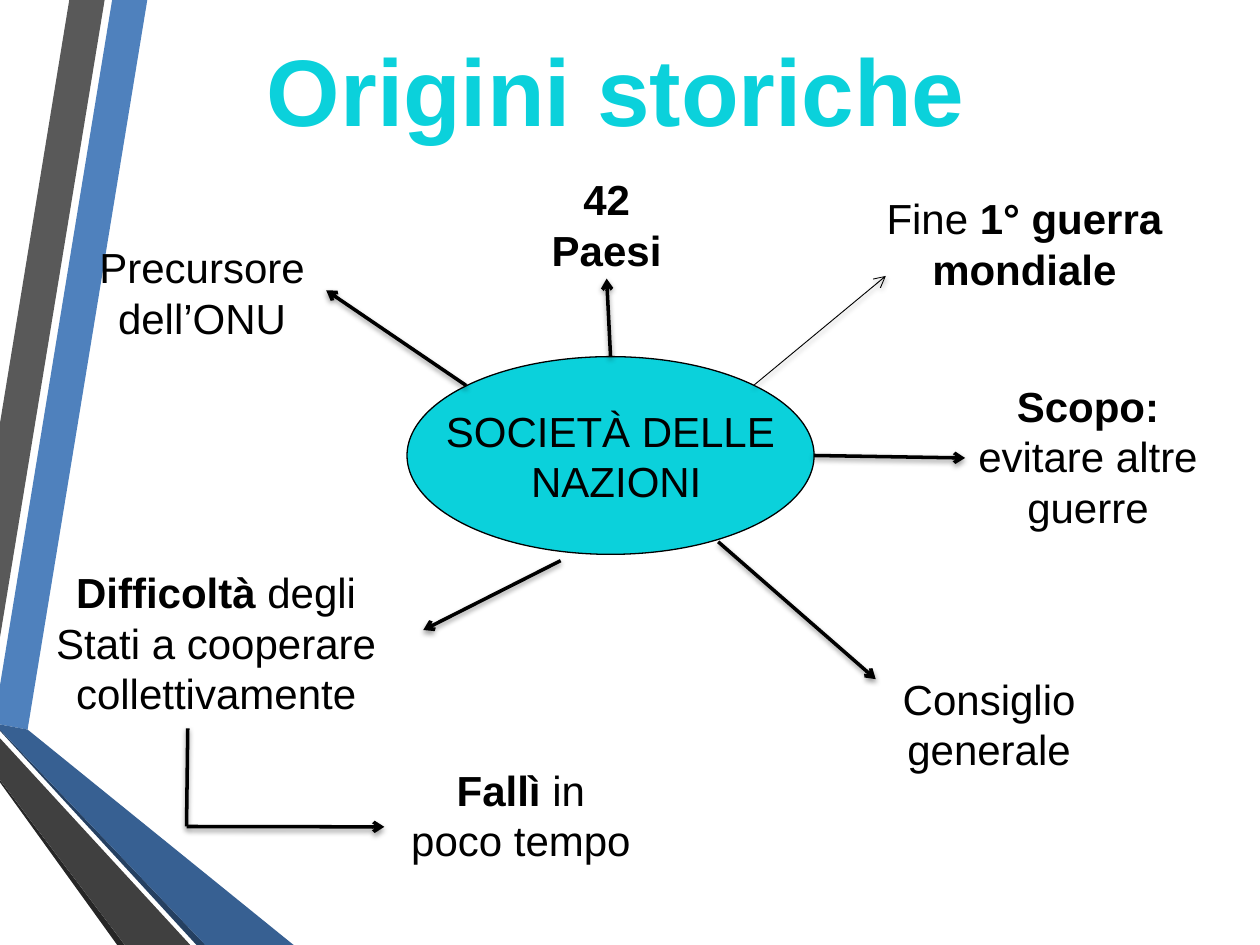
from lxml import etree
from pptx import Presentation
from pptx import util as u
from pptx.dml.color import RGBColor
from pptx.enum import shapes, text
from pptx.oxml import ns

Pt = u.Pt
COLORS = {
    "black": "000000", "cyan": "0BD1DB", "blue": "4F81BD", "gray": "595959",
    "ink": "262626", "navy": "254061", "steel": "376092", "charcoal": "404040",
}

# Folded ribbon on the left: colour and corner points
RIBBON = [
    ("blue", [(0, 391.7), (0, 414), (15.8, 416.9), (84.2, 0), (64.1, 0)]),
    ("gray", [(59.8, 0), (39.6, 0), (0, 241.9), (0, 364.3)]),
    ("ink", [(0, 445.7), (0, 447.1), (67, 540), (71.3, 540)]),
    ("navy", [(0, 416.9), (0, 417.6), (112.3, 540), (117.4, 540)]),
    ("steel", [(0, 416.9), (117.4, 540), (167.8, 540), (15.8, 416.9), (0, 414)]),
    ("charcoal", [(0, 445.7), (71.3, 540), (108.7, 540), (0, 421.9)]),
]

# Notes around the centre: box, then paragraphs of (words, bold) spans
NOTES = {
    "war": ((495.4, 106.6, 180, 67.7),
            [[("Fine ", False), ("1° guerra mondiale", True)]]),
    "members": ((303.8, 95.8, 85.7, 63.4), [[("42 Paesi", True)]]),
    "purpose": ((551.5, 213.8, 140.4, 95.8),
                [[("Scopo:", True)], [("evitare altre guerre", False)]]),
    "precursor": ((44.6, 134.6, 141.8, 62.6), [[("Precursore dell’ONU", False)]]),
    "failure": ((224.6, 433.4, 146.2, 61.9),
                [[("Fallì", True), (" in poco tempo", False)]]),
    "difficulty": ((16.6, 320.4, 213.8, 101.5),
                   [[("Difficoltà", True),
                     (" degli Stati a cooperare collettivamente", False)]]),
}


def rgb(name):
    return RGBColor.from_string(COLORS[name])


def write(frame, paragraphs, *, size=24, color="black", middle=False, wrap=True):
    frame.word_wrap = wrap
    frame.vertical_anchor = text.MSO_ANCHOR.MIDDLE if middle else text.MSO_ANCHOR.TOP
    for index, spans in enumerate(paragraphs):
        para = frame.add_paragraph() if index else frame.paragraphs[0]
        para.alignment = text.PP_ALIGN.CENTER
        for words, bold in spans:
            span = para.add_run()
            span.text = words
            span.font.name = "Arial"
            span.font.size = Pt(size)
            span.font.bold = bold
            span.font.color.rgb = rgb(color)


def add_note(page, place, paragraphs, **style):
    box = page.shapes.add_textbox(*map(Pt, place))
    write(box.text_frame, paragraphs, **style)
    return box


def add_band(page, color, corners):
    points = [(Pt(x), Pt(y)) for x, y in corners]
    builder = page.shapes.build_freeform(*points[0])
    builder.add_line_segments(points[1:], close=True)
    band = builder.convert_to_shape()
    band.shadow.inherit = False
    band.fill.solid()
    band.fill.fore_color.rgb = rgb(color)
    band.line.fill.background()


def add_center(page):
    oval = page.shapes.add_shape(shapes.MSO_SHAPE.OVAL,
                                 *map(Pt, (232.6, 203.8, 232.6, 113)))
    oval.shadow.inherit = False
    oval.fill.solid()
    oval.fill.fore_color.rgb = rgb("cyan")
    oval.line.color.rgb = rgb("black")
    oval.line.width = Pt(0.75)
    write(oval.text_frame, [[("SOCIETÀ DELLE", False)], [(" NAZIONI", False)]],
          middle=True, wrap=False)
    return oval


def add_line(page, start, end, width=2, head=True):
    line = page.shapes.add_connector(shapes.MSO_CONNECTOR.STRAIGHT,
                                     *map(Pt, start + end))
    line.line.color.rgb = rgb("black")
    line.line.width = Pt(width)
    if head:
        etree.SubElement(line.line._get_or_add_ln(), ns.qn("a:tailEnd"), type="arrow")
    # Soft shadow straight below the line
    effects = etree.SubElement(line._element.spPr, ns.qn("a:effectLst"))
    shadow = etree.SubElement(effects, ns.qn("a:outerShdw"), blurRad=str(Pt(3.1)),
                              dist=str(Pt(1.6)), dir="5400000", rotWithShape="0")
    color = etree.SubElement(shadow, ns.qn("a:srgbClr"), val=COLORS["black"])
    etree.SubElement(color, ns.qn("a:alpha"), val="38000")
    return line


def main():
    deck = Presentation()
    deck.slide_width, deck.slide_height = Pt(720), Pt(540)
    page = deck.slides.add_slide(deck.slide_layouts[6])

    # Background ribbon
    for color, corners in RIBBON:
        add_band(page, color, corners)

    # Title, centre and notes
    add_note(page, (28.1, 16.6, 648, 67.7), [[("Origini storiche", True)]],
             size=54, color="cyan", middle=True)
    center = add_center(page)
    notes = {name: add_note(page, *note) for name, note in NOTES.items()}

    # Arrows from the centre
    add_line(page, (430.6, 220.3), (506.2, 157.7), width=0.5)
    add_line(page, (266.4, 220.3), (186.4, 165.9)).end_connect(notes["precursor"], 3)
    upward = add_line(page, (348.9, 203.8), (346.7, 159.2))
    upward.begin_connect(center, 0)
    upward.end_connect(notes["members"], 2)
    add_line(page, (465.2, 260.3), (551.5, 261.7)).end_connect(notes["purpose"], 1)
    add_line(page, (320.4, 320.4), (241.9, 360))

    # Bent arrow from the difficulty to the failure
    add_line(page, (106.6, 472.3), (219.6, 472.5))
    add_line(page, (107.3, 416.2), (106.6, 472.3), head=False)

    # General council
    add_line(page, (410.4, 309.6), (500.4, 388.1))
    add_note(page, (478.1, 371.5, 174.2, 84.2), [[("Consiglio generale", False)]],
             middle=True)

    deck.save("out.pptx")


if __name__ == "__main__":
    main()
